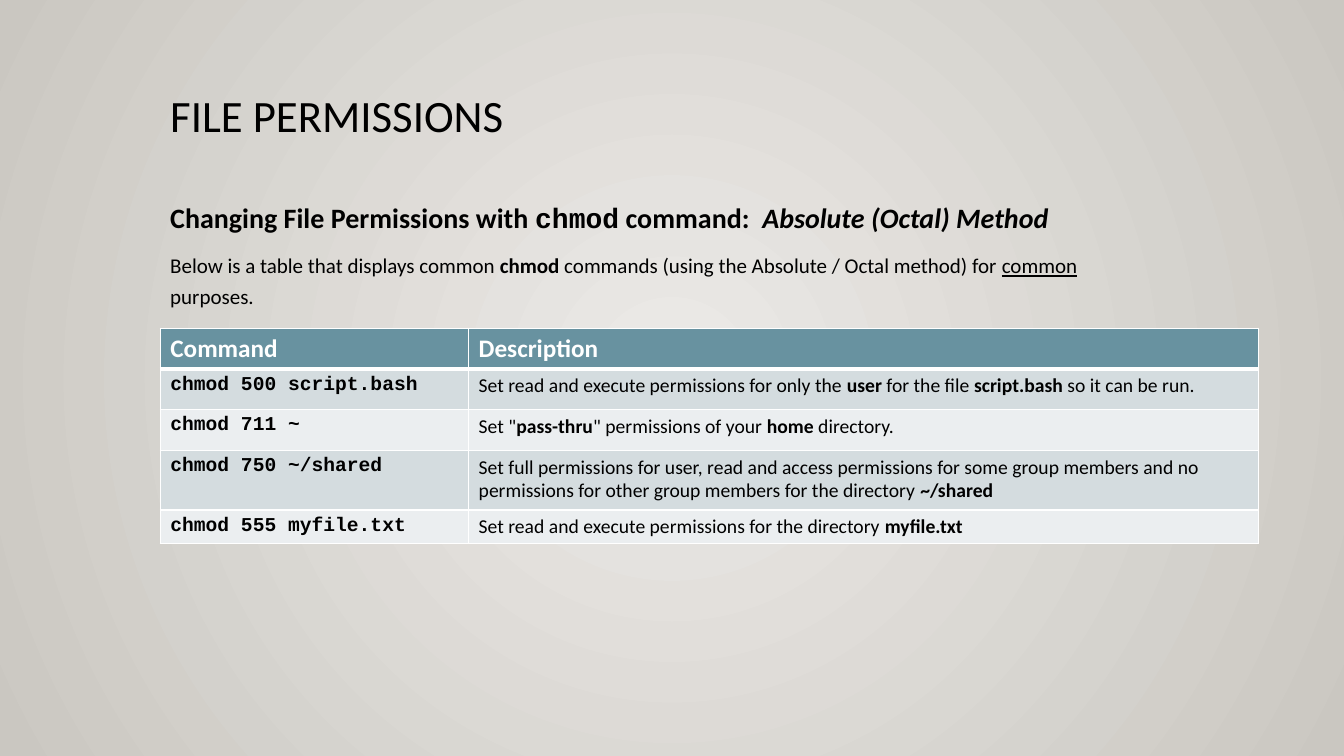
from dataclasses import dataclass
from typing import NamedTuple

from lxml.etree import SubElement
from pptx import Presentation
from pptx.dml.color import RGBColor as Rgb
from pptx.enum.text import MSO_ANCHOR as Anchor
from pptx.oxml.ns import qn
from pptx.util import Cm, Pt


@dataclass(frozen=True)
class Theme:
    sans: str = "Calibri"
    mono: str = "Courier New"
    ink: str = "000000"
    white: str = "FFFFFF"
    header: str = "6892A0"
    bands: tuple = ("D4DCDF", "EBEEF0")
    glow: tuple = ("ECEAE7", "CAC7C1")
    title_size: int = 32
    heading_size: int = 20
    intro_size: int = 15
    column_size: int = 18
    cell_size: int = 14
    border: int = 1
    header_border: int = 3


THEME = Theme()


class Span(NamedTuple):
    text: str
    bold: bool = False
    italic: bool = False
    underline: bool = False
    font: str = THEME.sans


class Permission(NamedTuple):
    command: str
    description: list[Span]
    height: float


def bold(text: str) -> Span:
    return Span(text, bold=True)


def code(text: str) -> Span:
    return Span(text, bold=True, font=THEME.mono)


TITLE = [Span("FILE PERMISSIONS")]
HEADING = [
    bold("Changing File Permissions with "), code("chmod"), bold(" command:  "),
    Span("Absolute (Octal) Method", bold=True, italic=True),
]
INTRO = [
    Span("Below is a table that displays common "), bold("chmod"),
    Span(" commands (using the Absolute / Octal method) for "),
    Span("common", underline=True), Span(" purposes."),
]
COLUMNS = ["Command", "Description"]
COLUMN_WIDTHS = [7.77, 19.91]
HEADER_HEIGHT = 1.02
PERMISSIONS = [
    Permission("chmod 500 script.bash", [
        Span("Set read and execute permissions for only the "), bold("user"),
        Span(" for the file "), bold("script.bash"), Span(" so it can be run."),
    ], 1.03),
    Permission("chmod 711 ~", [
        Span('Set "'), bold("pass-thru"), Span('" permissions of your '),
        bold("home"), Span(" directory."),
    ], 1.03),
    Permission("chmod 750 ~/shared", [
        Span("Set full permissions for user, read and access permissions for some "
             "group members and no permissions for other group members for the directory "),
        bold("~/shared"),
    ], 1.5),
    Permission("chmod 555 myfile.txt", [
        Span("Set read and execute permissions for the directory "), bold("myfile.txt"),
    ], 0.85),
]
LEFT = 4.04


def write(paragraph, spans: list[Span], size: int, color: str = THEME.ink) -> None:
    for span in spans:
        run = paragraph.add_run()
        run.text = span.text
        font = run.font
        font.name, font.size = span.font, Pt(size)
        font.bold, font.italic, font.underline = span.bold, span.italic, span.underline
        font.color.rgb = Rgb.from_string(color)


def add_text_frame(slide, top: float, width: float, height: float):
    frame = slide.shapes.add_textbox(Cm(LEFT), Cm(top), Cm(width), Cm(height)).text_frame
    frame.word_wrap = True
    frame.vertical_anchor = Anchor.TOP
    return frame


def paint_background(slide) -> None:
    fill = slide.background.fill
    fill.gradient()
    for stop, color in zip(fill.gradient_stops, THEME.glow):
        stop.color.rgb = Rgb.from_string(color)
    # Radial gradient from the centre outwards
    gradient = slide.element.find(".//" + qn("a:gradFill"))
    gradient.remove(gradient.find(qn("a:lin")))
    circle = SubElement(gradient, qn("a:path"), path="circle")
    SubElement(circle, qn("a:fillToRect"), dict.fromkeys("ltrb", "50000"))


def add_borders(cell, top: int, bottom: int) -> None:
    properties = cell._tc.get_or_add_tcPr()
    widths = {"L": THEME.border, "R": THEME.border, "T": top, "B": bottom}
    for index, (side, width) in enumerate(widths.items()):
        line = SubElement(properties, qn(f"a:ln{side}"), w=str(Pt(width)))
        fill = SubElement(line, qn("a:solidFill"))
        SubElement(fill, qn("a:srgbClr"), val=THEME.white)
        properties.insert(index, line)


def fill_cell(cell, spans: list[Span], size: int, ink: str, fill: str,
              top: int, bottom: int) -> None:
    write(cell.text_frame.paragraphs[0], spans, size, ink)
    cell.fill.solid()
    cell.fill.fore_color.rgb = Rgb.from_string(fill)
    add_borders(cell, top, bottom)


def add_permission_table(slide) -> None:
    heights = [HEADER_HEIGHT] + [permission.height for permission in PERMISSIONS]
    table = slide.shapes.add_table(
        len(heights), len(COLUMNS), Cm(LEFT), Cm(8.27),
        Cm(sum(COLUMN_WIDTHS)), Cm(sum(heights))).table
    table.horz_banding = False
    for column, width in zip(table.columns, COLUMN_WIDTHS):
        column.width = Cm(width)
    for row, height in zip(table.rows, heights):
        row.height = Cm(height)

    # Header row
    for index, name in enumerate(COLUMNS):
        fill_cell(table.cell(0, index), [bold(name)], THEME.column_size, THEME.white,
                  THEME.header, THEME.border, THEME.header_border)

    # One row per command
    for number, permission in enumerate(PERMISSIONS, start=1):
        band = THEME.bands[(number - 1) % 2]
        top = THEME.header_border if number == 1 else THEME.border
        for index, spans in enumerate(([code(permission.command)], permission.description)):
            fill_cell(table.cell(number, index), spans, THEME.cell_size, THEME.ink,
                      band, top, THEME.border)


def main() -> None:
    deck = Presentation()
    deck.slide_width, deck.slide_height = Cm(33.87), Cm(19.05)
    slide = deck.slides.add_slide(deck.slide_layouts[6])
    paint_background(slide)

    # Title
    title = add_text_frame(slide, 2.24, 26.67, 2.92).paragraphs[0]
    title.line_spacing = 0.9
    write(title, TITLE, THEME.title_size)

    # Heading and introduction
    body = add_text_frame(slide, 4.75, 25.37, 3.53)
    heading, intro = body.paragraphs[0], body.add_paragraph()
    heading.line_spacing = intro.line_spacing = 1.2
    intro.space_before = Pt(10)
    write(heading, HEADING, THEME.heading_size)
    write(intro, INTRO, THEME.intro_size)

    add_permission_table(slide)
    deck.save("out.pptx")


if __name__ == "__main__":
    main()
